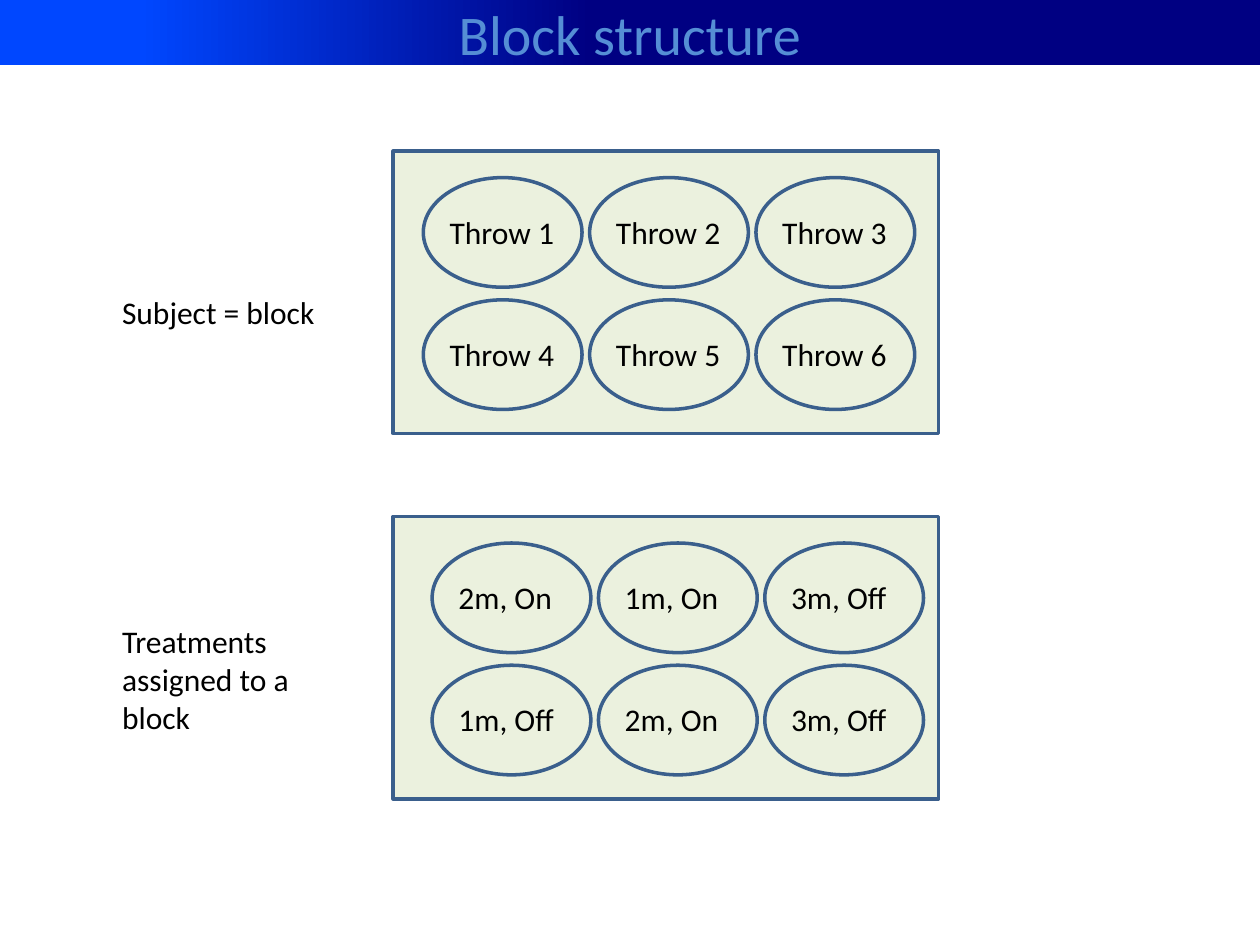
"""Build a slide showing throws in a block and the treatments assigned to them."""
from pptx import Presentation
from pptx.dml.color import RGBColor
from pptx.enum.shapes import MSO_SHAPE
from pptx.enum.text import MSO_ANCHOR, MSO_AUTO_SIZE, PP_ALIGN
from pptx.util import Inches, Pt

RECTANGLE, OVAL = MSO_SHAPE.RECTANGLE, MSO_SHAPE.OVAL
MIDDLE, CENTER = MSO_ANCHOR.MIDDLE, PP_ALIGN.CENTER
FIT_SHAPE, FIT_NONE = MSO_AUTO_SIZE.SHAPE_TO_FIT_TEXT, MSO_AUTO_SIZE.NONE

NAVY = RGBColor(0x00, 0x00, 0x82)
BRIGHT_BLUE = RGBColor(0x00, 0x47, 0xFF)
TITLE_BLUE = RGBColor(0x55, 0x8E, 0xD5)
OUTLINE = RGBColor(0x3A, 0x5F, 0x8C)
PALE_GREEN = RGBColor(0xEB, 0xF1, 0xDE)
BLACK = RGBColor(0x00, 0x00, 0x00)
FONT = "Calibri"

TITLE = "Block structure"
BLOCKS = [
    {"top": 1.2, "indent": 0.24, "label_width": 1.04,
     "rows": [["Throw 1", "Throw 2", "Throw 3"], ["Throw 4", "Throw 5", "Throw 6"]]},
    {"top": 4.1, "indent": 0.31, "label_width": 0.96,
     "rows": [["2m, On", "1m, On", "3m, Off"], ["1m, Off", "2m, On", "3m, Off"]]},
]
CAPTIONS = [
    ("Subject = block", (0.87, 2.28, 1.75, 0.4), False),
    ("Treatments assigned to a block", (0.87, 4.89, 2.05, 1.01), True),
]

BLOCK_LEFT, BLOCK_WIDTH, BLOCK_HEIGHT = 3.12, 4.33, 2.24
OVAL_WIDTH, OVAL_HEIGHT = 1.26, 0.87
COLUMN_STEP, ROW_STEP, TOP_MARGIN = 1.32, 0.97, 0.21
LABEL_LEFT, LABEL_TOP, LABEL_HEIGHT = 0.11, 0.23, 0.4


def add_span(para, text, size, color):
    span = para.add_run()
    span.text = text
    span.font.name = FONT
    span.font.size = Pt(size)
    span.font.color.rgb = color


def add_outlined(shapes, kind, place, fill=None):
    shape = shapes.add_shape(kind, *map(Inches, place))
    shape.shadow.inherit = False
    if fill is None:
        shape.fill.background()
    else:
        shape.fill.solid()
        shape.fill.fore_color.rgb = fill
    shape.line.color.rgb = OUTLINE
    shape.line.width = Pt(2)


def add_label(shapes, text, place, wrap=False):
    box = shapes.add_textbox(*map(Inches, place))
    box.text_frame.word_wrap = wrap
    box.text_frame.auto_size = FIT_SHAPE
    add_span(box.text_frame.paragraphs[0], text, 18, BLACK)


def add_title(page):
    title = page.shapes.title
    title.left, title.top, title.width, title.height = map(Inches, (0, 0, 10, 0.52))
    title.fill.gradient()
    title.fill.gradient_angle = 180
    for stop, (position, color) in zip(title.fill.gradient_stops,
                                       [(0.53, NAVY), (0.89, BRIGHT_BLUE)]):
        stop.position = position
        stop.color.rgb = color
    frame = title.text_frame
    frame.auto_size = FIT_NONE
    frame.vertical_anchor = MIDDLE
    frame.paragraphs[0].alignment = CENTER
    add_span(frame.paragraphs[0], TITLE, 32, TITLE_BLUE)


def add_block(page, block):
    shapes = page.shapes.add_group_shape().shapes
    add_outlined(shapes, RECTANGLE,
                 (BLOCK_LEFT, block["top"], BLOCK_WIDTH, BLOCK_HEIGHT), PALE_GREEN)
    for row, labels in enumerate(block["rows"]):
        top = block["top"] + TOP_MARGIN + row * ROW_STEP
        for column, text in enumerate(labels):
            left = BLOCK_LEFT + block["indent"] + column * COLUMN_STEP
            add_label(shapes, text, (left + LABEL_LEFT, top + LABEL_TOP,
                                     block["label_width"], LABEL_HEIGHT))
            add_outlined(shapes, OVAL, (left, top, OVAL_WIDTH, OVAL_HEIGHT))


def main():
    deck = Presentation()
    deck.slide_width, deck.slide_height = Inches(10), Inches(7.5)
    page = deck.slides.add_slide(deck.slide_layouts[5])
    add_title(page)
    for block in BLOCKS:
        add_block(page, block)
    for text, place, wrap in CAPTIONS:
        add_label(page.shapes, text, place, wrap)
    deck.save("out.pptx")


if __name__ == "__main__":
    main()
